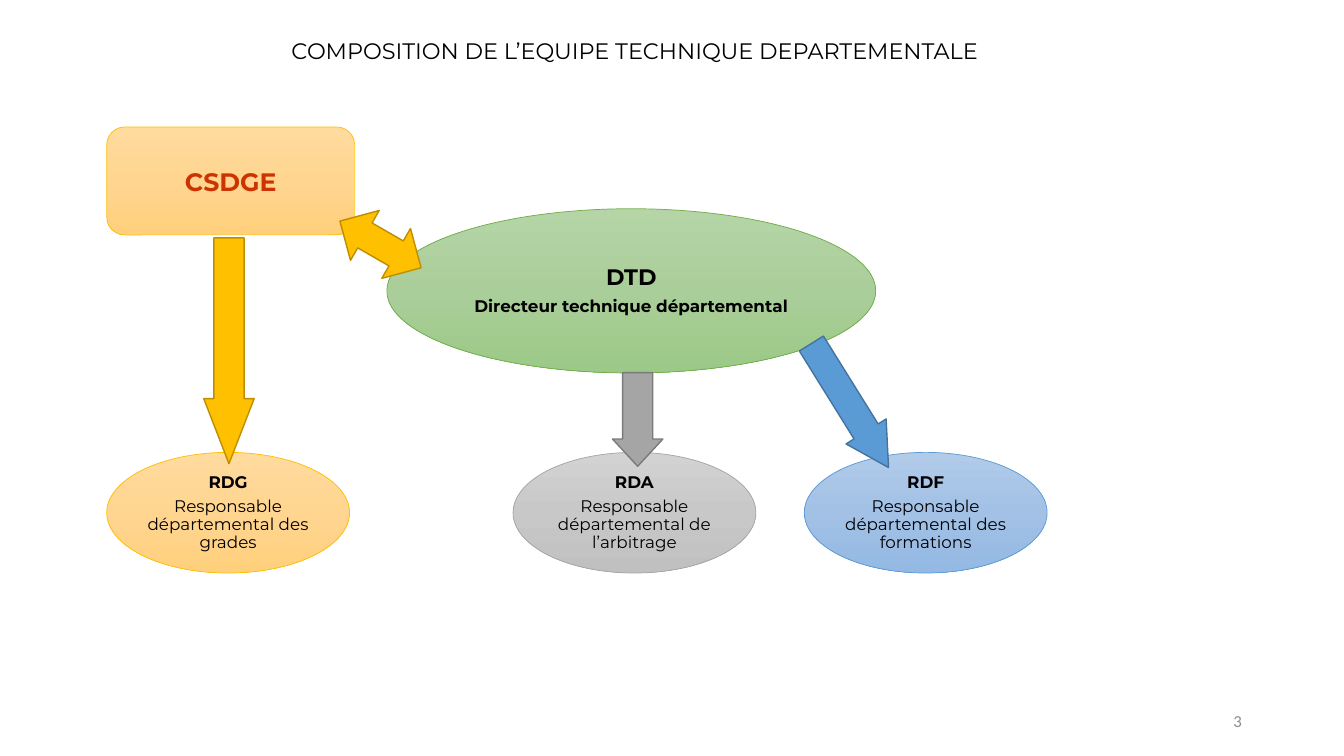
import copy
import dataclasses

import pptx
import pptx.dml.color
import pptx.enum.shapes
import pptx.enum.text
import pptx.oxml.ns
import pptx.util
from pptx.util import Cm

MSO_SHAPE = pptx.enum.shapes.MSO_SHAPE
PP_ALIGN = pptx.enum.text.PP_ALIGN


@dataclasses.dataclass(frozen=True)
class Palette:
    gradient: tuple[str, str, str]
    outline: str
    arrow_line: str = ""


@dataclasses.dataclass(frozen=True)
class Theme:
    font: str = "Montserrat"
    number_font: str = "Calibri"
    black: str = "000000"
    red: str = "CC3300"
    number_grey: str = "8C8C8C"
    heading: float = 18
    title: float = 16
    body: float = 12
    node_line: float = 0.5
    arrow_line: float = 1
    gold: Palette = Palette(("FFDB9E", "FFD590", "FFD07C"), "FFC000", "BD8E00")
    green: Palette = Palette(("B5D5A7", "AACE9A", "9CC987"), "70AD47")
    grey: Palette = Palette(("D2D2D2", "C8C8C8", "C0C0C0"), "A5A5A5", "7A7A7A")
    blue: Palette = Palette(("B1CBE9", "A3C1E5", "93B9E4"), "5B9BD5", "43739E")


THEME = Theme()


@dataclasses.dataclass(frozen=True)
class Line:
    text: str
    size: float = THEME.body
    bold: bool = False
    color: str = THEME.black
    font: str = THEME.font


@dataclasses.dataclass(frozen=True)
class Node:
    """A labelled shape; lengths in centimetres."""
    kind: MSO_SHAPE
    left: float
    top: float
    width: float
    height: float
    palette: Palette
    lines: tuple[Line, ...]


@dataclasses.dataclass(frozen=True)
class Arrow:
    """A block arrow placed by its centre; lengths in centimetres."""
    kind: MSO_SHAPE
    center_x: float
    center_y: float
    length: float
    thickness: float
    rotation: float
    palette: Palette
    adjustments: tuple[float, float]


def responsible(left: float, palette: Palette, code: str, role: str) -> Node:
    lines = (Line(code, bold=True), Line(role))
    return Node(MSO_SHAPE.OVAL, left, 11.4, 6.12, 3.04, palette, lines)


NODES = (
    responsible(20.27, THEME.blue, "RDF", "Responsable départemental des formations"),
    Node(MSO_SHAPE.OVAL, 9.75, 5.26, 12.32, 4.14, THEME.green,
         (Line("DTD", THEME.title, True),
          Line("Directeur technique départemental", bold=True))),
    Node(MSO_SHAPE.ROUNDED_RECTANGLE, 2.69, 3.2, 6.25, 2.72, THEME.gold,
         (Line("CSDGE", THEME.heading, True, THEME.red),)),
    responsible(2.69, THEME.gold, "RDG", "Responsable départemental des grades"),
    responsible(12.93, THEME.grey, "RDA", "Responsable départemental de l’arbitrage"),
)

ARROWS = (
    Arrow(MSO_SHAPE.RIGHT_ARROW, 21.42, 10.22, 3.68, 1.19, 58.1, THEME.blue, (0.6, 0.9)),
    Arrow(MSO_SHAPE.RIGHT_ARROW, 5.77, 8.84, 5.69, 1.27, 90, THEME.gold, (0.6, 1.29)),
    Arrow(MSO_SHAPE.LEFT_RIGHT_ARROW, 9.59, 6.16, 2.36, 1.45, 29.9, THEME.gold, (0.5, 0.5)),
    Arrow(MSO_SHAPE.RIGHT_ARROW, 16.07, 10.57, 2.36, 1.27, 90, THEME.grey, (0.6, 0.54)),
)


def rgb(value: str) -> pptx.dml.color.RGBColor:
    return pptx.dml.color.RGBColor.from_string(value)


def write_line(paragraph, line: Line, alignment: PP_ALIGN) -> None:
    paragraph.text = line.text
    paragraph.alignment = alignment
    font = paragraph.runs[0].font
    font.name = line.font
    font.size = pptx.util.Pt(line.size)
    font.bold = line.bold
    font.color.rgb = rgb(line.color)


def fill_gradient(shape, colors: tuple[str, str, str]) -> None:
    shape.fill.gradient()
    shape.fill.gradient_angle = 270
    stop_list = shape._element.spPr.find(".//" + pptx.oxml.ns.qn("a:gsLst"))
    stop_list.insert(1, copy.deepcopy(stop_list[0]))
    for index, (stop, color) in enumerate(zip(shape.fill.gradient_stops, colors)):
        stop.position = index / 2
        stop.color.rgb = rgb(color)


def set_outline(shape, color: str, width: float) -> None:
    shape.shadow.inherit = False
    shape.line.color.rgb = rgb(color)
    shape.line.width = pptx.util.Pt(width)


def draw_node(slide, node: Node) -> None:
    shape = slide.shapes.add_shape(
        node.kind, Cm(node.left), Cm(node.top), Cm(node.width), Cm(node.height))
    fill_gradient(shape, node.palette.gradient)
    set_outline(shape, node.palette.outline, THEME.node_line)
    frame = shape.text_frame
    frame.word_wrap = True
    frame.vertical_anchor = pptx.enum.text.MSO_ANCHOR.MIDDLE
    frame.margin_left = frame.margin_right = frame.margin_top = frame.margin_bottom = 0
    frame.text = "\n".join(line.text for line in node.lines)
    for paragraph, line in zip(frame.paragraphs, node.lines):
        write_line(paragraph, line, PP_ALIGN.CENTER)
        if node.kind == MSO_SHAPE.OVAL:
            paragraph.line_spacing = 0.9
            paragraph.space_after = pptx.util.Pt(0.35 * line.size)


def draw_arrow(slide, arrow: Arrow) -> None:
    shape = slide.shapes.add_shape(
        arrow.kind,
        Cm(arrow.center_x - arrow.length / 2), Cm(arrow.center_y - arrow.thickness / 2),
        Cm(arrow.length), Cm(arrow.thickness))
    shape.rotation = arrow.rotation
    for index, value in enumerate(arrow.adjustments):
        shape.adjustments[index] = value
    shape.fill.solid()
    shape.fill.fore_color.rgb = rgb(arrow.palette.outline)
    set_outline(shape, arrow.palette.arrow_line, THEME.arrow_line)


def draw_text(slide, left: float, top: float, width: float, height: float,
              line: Line, alignment: PP_ALIGN) -> None:
    frame = slide.shapes.add_textbox(Cm(left), Cm(top), Cm(width), Cm(height)).text_frame
    frame.word_wrap = True
    frame.vertical_anchor = pptx.enum.text.MSO_ANCHOR.MIDDLE
    write_line(frame.paragraphs[0], line, alignment)


def main() -> None:
    presentation = pptx.Presentation()
    presentation.slide_width, presentation.slide_height = Cm(33.87), Cm(19.05)
    slide = presentation.slides.add_slide(presentation.slide_layouts[6])

    # Roles, then the arrows that link them
    for node in NODES:
        draw_node(slide, node)
    for arrow in ARROWS:
        draw_arrow(slide, arrow)

    # Title and slide number
    draw_text(slide, 0, 0.81, 32, 0.94,
              Line("COMPOSITION DE L’EQUIPE TECHNIQUE DEPARTEMENTALE", THEME.title),
              PP_ALIGN.CENTER)
    draw_text(slide, 23.93, 17.65, 7.62, 1.02,
              Line("3", color=THEME.number_grey, font=THEME.number_font), PP_ALIGN.RIGHT)

    presentation.save("out.pptx")


if __name__ == "__main__":
    main()
